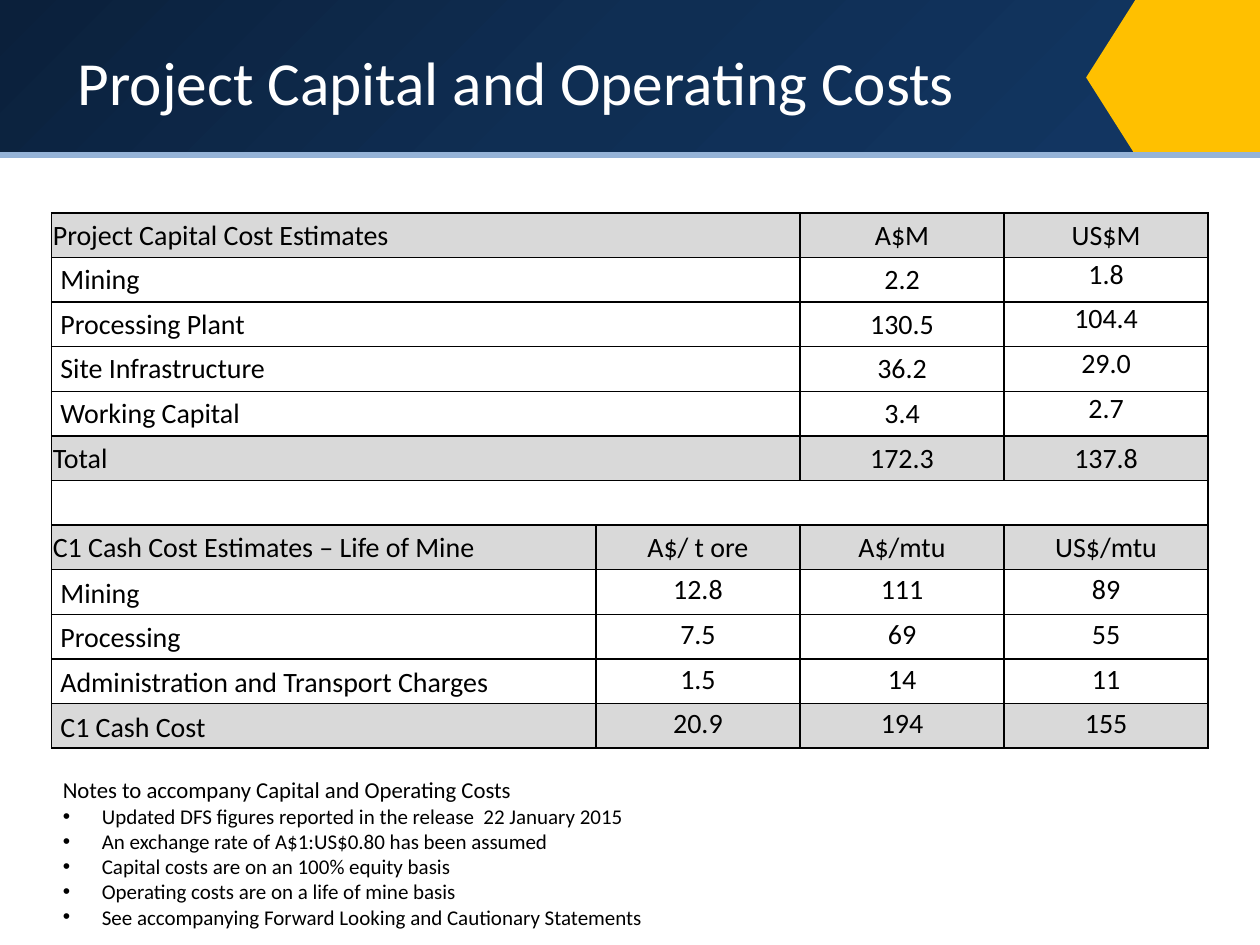
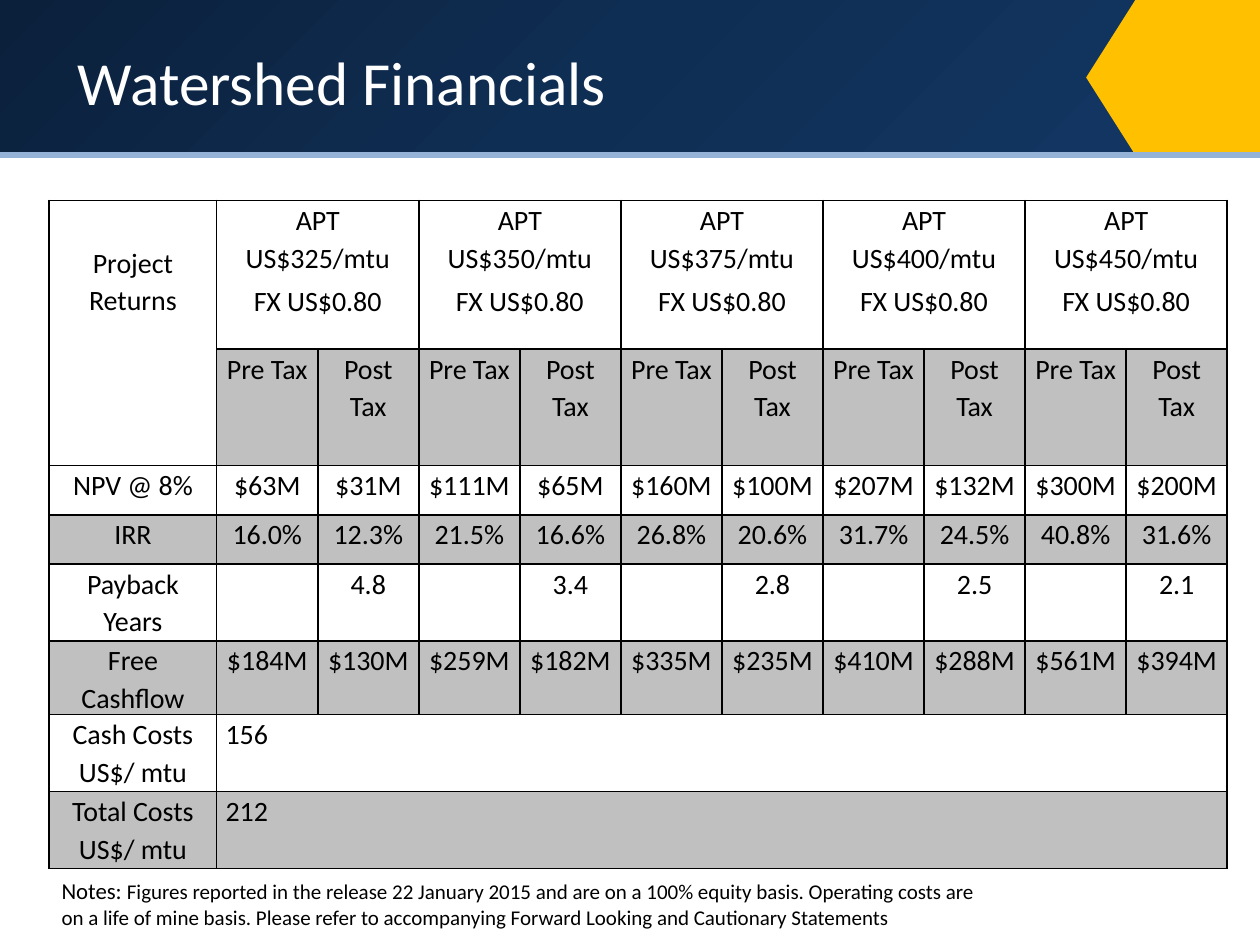
from lxml import etree
from pptx import Presentation
from pptx.dml.color import RGBColor
from pptx.enum.shapes import MSO_CONNECTOR, MSO_SHAPE
from pptx.enum.text import MSO_ANCHOR, PP_ALIGN
from pptx.oxml.ns import qn
from pptx.util import Inches, Pt

LEFT, CENTER = PP_ALIGN.LEFT, PP_ALIGN.CENTER
TOP, MIDDLE = MSO_ANCHOR.TOP, MSO_ANCHOR.MIDDLE
RECTANGLE, TRIANGLE = MSO_SHAPE.RECTANGLE, MSO_SHAPE.ISOSCELES_TRIANGLE
STRAIGHT = MSO_CONNECTOR.STRAIGHT

THEME = {
    "font": "Calibri",
    "title": 35, "table": 16, "lead": 13, "note": 12,
    "ink": "000000", "paper": "FFFFFF", "gold": "FFC000", "rule": "95B3D7",
    "band": [(0, "0B203B"), (50, "0F2E53"), (100, "123663")],
    "light": "D9D9D9", "mid": "C0C0C0",
}
WIDTH, HEIGHT = 10, 7.5
BAND = 1.23
FLAG = 0.99
POINT = 0.39
NO_GRID_STYLE = "{2D5ABB26-0587-4C30-8999-92F81FD0307C}"

BESIDE, ABOVE = "merge with left", "merge with above"

COSTS = {
    "title": "Project Capital and Operating Costs",
    "place": (0.41, 1.69),
    "columns": [4.32] + [1.62] * 3,
    "heights": [4.25 / 12] * 12,
    "rows": [
        ("heading", ["Project Capital Cost Estimates", BESIDE, "A$M", "US$M"]),
        ("capital", ["Mining", BESIDE, "2.2", "1.8"]),
        ("capital", ["Processing Plant", BESIDE, "130.5", "104.4"]),
        ("capital", ["Site Infrastructure", BESIDE, "36.2", "29.0"]),
        ("capital", ["Working Capital", BESIDE, "3.4", "2.7"]),
        ("heading", ["Total", BESIDE, "172.3", "137.8"]),
        ("gap", ["", BESIDE, "", ""]),
        ("heading", ["C1 Cash Cost Estimates – Life of Mine", "A$/ t ore", "A$/mtu", "US$/mtu"]),
        ("operating", ["Mining", "12.8", "111", "89"]),
        ("operating", ["Processing", "7.5", "69", "55"]),
        ("operating", ["Administration and Transport Charges", "1.5", "14", "11"]),
        ("operating total", ["C1 Cash Cost", "20.9", "194", "155"]),
    ],
    "notes_at": (0.4, 6.11, 4.85, 1.94),
    "notes": [
        [("Notes to accompany Capital and Operating Costs", "lead")],
        [("Updated DFS figures reported in the release  22 January 2015", "note")],
        [("An exchange rate of A$1:US$0.80 has been assumed", "note")],
        [("Capital costs are on an 100% equity basis", "note")],
        [("Operating costs are on a life of mine basis", "note")],
        [("See accompanying Forward Looking and Cautionary Statements", "note")],
    ],
}

PRICES = [325, 350, 375, 400, 450]
price_heads = [text for price in PRICES
               for text in (f"APT US${price}/mtu\nFX US$0.80", BESIDE)]
payback = [text for years in ("4.8", "3.4", "2.8", "2.5", "2.1") for text in ("", years)]

FINANCIALS = {
    "title": "Watershed Financials",
    "place": (0.39, 1.59),
    "columns": [1.33] + [(9.35 - 1.33) / 10] * 10,
    "heights": [1.18, 0.61, 0.39, 0.39, 0.61, 0.57, 0.61, 0.61],
    "rows": [
        ("returns", ["Project Returns"] + price_heads),
        ("shaded returns", [ABOVE] + ["Pre Tax", "Post Tax"] * len(PRICES)),
        ("returns", ["NPV @ 8%", "$63M", "$31M", "$111M", "$65M", "$160M", "$100M",
                     "$207M", "$132M", "$300M", "$200M"]),
        ("shaded returns", ["IRR", "16.0%", "12.3%", "21.5%", "16.6%", "26.8%", "20.6%",
                            "31.7%", "24.5%", "40.8%", "31.6%"]),
        ("returns", ["Payback Years"] + payback),
        ("shaded returns", ["Free Cashflow", "$184M", "$130M", "$259M", "$182M", "$335M",
                            "$235M", "$410M", "$288M", "$561M", "$394M"]),
        ("per unit", ["Cash Costs US$/ mtu", "156"] + [BESIDE] * 9),
        ("shaded per unit", ["Total Costs US$/ mtu", "212"] + [BESIDE] * 9),
    ],
    "label_drop": 0.34,
    "notes_at": (0.39, 6.91, 7.55, 0.93),
    "notes": [[
        ("Notes: ", "lead"),
        ("Figures reported in the release 22 January 2015 and are on a 100% equity basis. "
         "Operating costs are on a life of mine basis. Please refer to accompanying "
         "Forward Looking and Cautionary Statements", "note"),
    ]],
}


def row_style(fill=None, side=0.07, top=0, spacing=None, align=(LEFT, CENTER),
              anchors=(MIDDLE, MIDDLE, MIDDLE), open_inside=False):
    return {"fill": fill, "side": side, "top": top, "spacing": spacing, "align": align,
            "anchors": anchors, "open_inside": open_inside}


OPERATING = {"spacing": 1.1, "anchors": (MIDDLE, TOP, TOP)}
RETURNS = {"spacing": 1.1, "anchors": (TOP, TOP, TOP), "align": (CENTER, CENTER)}
PER_UNIT = {**RETURNS, "align": (CENTER, LEFT)}
ROW_STYLES = {
    "heading": row_style(THEME["light"], side=0.01, top=0.01),
    "capital": row_style(anchors=(MIDDLE, MIDDLE, TOP)),
    "gap": row_style(open_inside=True),
    "operating": row_style(**OPERATING),
    "operating total": row_style(THEME["light"], **OPERATING),
    "returns": row_style(**RETURNS),
    "shaded returns": row_style(THEME["mid"], **RETURNS),
    "per unit": row_style(**PER_UNIT),
    "shaded per unit": row_style(THEME["mid"], **PER_UNIT),
}


def colour(name):
    return RGBColor.from_string(THEME.get(name, name))


def assign(target, values):
    for name, value in values.items():
        setattr(target, name, value)


def add_span(para, text, size, ink="ink"):
    span = para.add_run()
    span.text = text
    assign(span.font, {"name": THEME["font"], "size": Pt(THEME[size])})
    span.font.color.rgb = colour(ink)


def add_text_box(page, place, anchor=TOP):
    box = page.shapes.add_textbox(*map(Inches, place))
    assign(box.text_frame, {"word_wrap": True, "vertical_anchor": anchor})
    return box.text_frame


def add_plain_shape(page, kind, place, fill=None):
    shape = page.shapes.add_shape(kind, *map(Inches, place))
    shape.shadow.inherit = False
    shape.line.fill.background()
    if fill:
        shape.fill.solid()
        shape.fill.fore_color.rgb = colour(fill)
    return shape


def add_header(page, title):
    band = add_plain_shape(page, RECTANGLE, (0, 0, WIDTH - 0.49, BAND))
    band.fill.gradient()
    band.fill.gradient_angle = 315
    stops = band._element.spPr.find(qn("a:gradFill")).find(qn("a:gsLst"))
    for stop in list(stops):
        stops.remove(stop)
    for share, shade in THEME["band"]:
        stop = etree.SubElement(stops, qn("a:gs"), pos=str(share * 1000))
        etree.SubElement(stop, qn("a:srgbClr"), val=shade)

    flag_left = WIDTH - FLAG
    add_plain_shape(page, RECTANGLE, (flag_left, 0, FLAG, BAND), "gold")
    point_left = flag_left - (POINT + BAND) / 2
    point = add_plain_shape(page, TRIANGLE, (point_left, (BAND - POINT) / 2, BAND, POINT), "gold")
    point.rotation = 270

    rule = page.shapes.add_connector(STRAIGHT, 0, Inches(BAND), Inches(WIDTH), Inches(BAND))
    rule.line.color.rgb = colour("rule")
    rule.line.width = Pt(3)
    etree.SubElement(rule._element.spPr, qn("a:effectLst"))

    frame = add_text_box(page, (0.52, 0.17, 7.92, 0.94), MIDDLE)
    add_span(frame.paragraphs[0], title, "title", "paper")


def add_borders(cell, sides):
    props = cell._tc.get_or_add_tcPr()
    for side in "LRTB":
        line = etree.SubElement(props, qn(f"a:ln{side}"), w=str(Pt(1)))
        if side in sides:
            fill = etree.SubElement(line, qn("a:solidFill"))
            etree.SubElement(fill, qn("a:srgbClr"), val=THEME["ink"])
        else:
            etree.SubElement(line, qn("a:noFill"))


def format_cell(cell, style, column, last):
    sides = "LRTB"
    if style["open_inside"]:
        sides = "TB" + "L" * (column == 0) + "R" * (column == last)
    add_borders(cell, sides)
    if style["fill"]:
        cell.fill.solid()
        cell.fill.fore_color.rgb = colour(style["fill"])
    else:
        cell.fill.background()
    first_inner_last = 0 if column == 0 else 2 if column == last else 1
    assign(cell, {
        "margin_left": Inches(style["side"]), "margin_right": Inches(style["side"]),
        "margin_top": Inches(style["top"]), "margin_bottom": 0,
        "vertical_anchor": style["anchors"][first_inner_last],
    })


def write_cell(cell, text, style, column):
    for index, line in enumerate(text.split("\n")):
        para = cell.text_frame.add_paragraph() if index else cell.text_frame.paragraphs[0]
        para.alignment = style["align"][min(column, 1)]
        if style["spacing"]:
            para.line_spacing = style["spacing"]
        if index:
            para.space_before = Pt(3)
        if line:
            add_span(para, line, "table")


def merge_cells(table, rows):
    for r, (_, texts) in enumerate(rows):
        for c, text in enumerate(texts):
            if text in (BESIDE, ABOVE):
                continue
            right, bottom = c, r
            while right + 1 < len(texts) and texts[right + 1] == BESIDE:
                right += 1
            while bottom + 1 < len(rows) and rows[bottom + 1][1][c] == ABOVE:
                bottom += 1
            if (right, bottom) != (c, r):
                table.cell(r, c).merge(table.cell(bottom, right))


def add_cost_table(page, content):
    rows, columns, heights = content["rows"], content["columns"], content["heights"]
    place = (*content["place"], sum(columns), sum(heights))
    table = page.shapes.add_table(len(rows), len(columns), *map(Inches, place)).table
    assign(table, {"first_row": False, "horz_banding": False})
    table._tbl.tblPr.find(qn("a:tableStyleId")).text = NO_GRID_STYLE
    for column, width in zip(table.columns, columns):
        column.width = Inches(width)
    for row, height in zip(table.rows, heights):
        row.height = Inches(height)
    for r, (kind, texts) in enumerate(rows):
        style = ROW_STYLES[kind]
        for c, text in enumerate(texts):
            cell = table.cell(r, c)
            format_cell(cell, style, c, len(columns) - 1)
            if text not in (BESIDE, ABOVE):
                write_cell(cell, text, style, c)
    if "label_drop" in content:
        table.cell(0, 0).margin_top = Inches(content["label_drop"])
    merge_cells(table, rows)


def add_bullet(para):
    props = para._p.get_or_add_pPr()
    props.set("marL", str(Inches(0.31)))
    props.set("indent", str(-Inches(0.31)))
    etree.SubElement(props, qn("a:buFont"), typeface="Arial")
    etree.SubElement(props, qn("a:buChar"), char="•")


def add_notes(page, content):
    frame = add_text_box(page, content["notes_at"])
    for index, spans in enumerate(content["notes"]):
        para = frame.add_paragraph() if index else frame.paragraphs[0]
        if index:
            add_bullet(para)
        for text, size in spans:
            add_span(para, text, size)


def main():
    deck = Presentation()
    assign(deck, {"slide_width": Inches(WIDTH), "slide_height": Inches(HEIGHT)})
    for content in (COSTS, FINANCIALS):
        page = deck.slides.add_slide(deck.slide_layouts[6])
        add_header(page, content["title"])
        add_notes(page, content)
        add_cost_table(page, content)
    deck.save("out.pptx")


if __name__ == "__main__":
    main()
